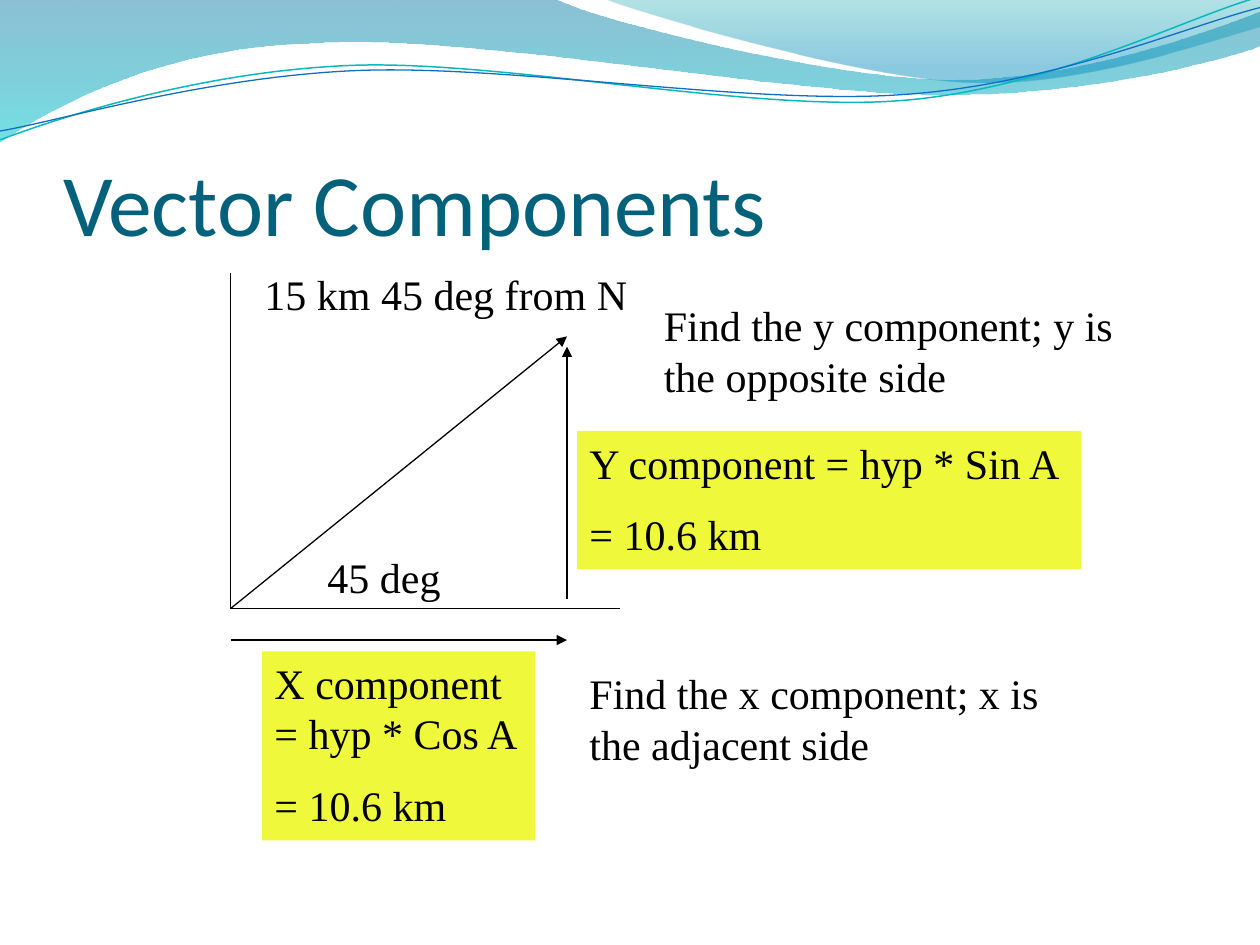
from math import cos, radians, sin

from lxml import etree
from pptx import Presentation
from pptx.dml.color import RGBColor
from pptx.enum.shapes import MSO_CONNECTOR, MSO_SHAPE
from pptx.enum.text import MSO_ANCHOR, PP_ALIGN
from pptx.oxml.ns import qn
from pptx.util import Inches, Pt

STRAIGHT = MSO_CONNECTOR.STRAIGHT
RECTANGLE = MSO_SHAPE.RECTANGLE
LEFT = PP_ALIGN.LEFT
TOP, BOTTOM = MSO_ANCHOR.TOP, MSO_ANCHOR.BOTTOM

BLACK = RGBColor(0x00, 0x00, 0x00)
YELLOW = RGBColor(0xEF, 0xF8, 0x3A)
TITLE_TEAL = RGBColor(0x04, 0x61, 0x7B)
DEEP_BLUE = RGBColor(0x00, 0x74, 0xA1)
CYAN = RGBColor(0x00, 0xC6, 0xCF)
SEA_GREEN = RGBColor(0x00, 0xA1, 0xA9)
SKY_BLUE = RGBColor(0x00, 0x8B, 0xBF)
LINE_TEAL = RGBColor(0x0A, 0xB8, 0xBF)
LINE_BLUE = RGBColor(0x0F, 0x6F, 0xC6)
WAVE_TILT = -2.7
WAVE_CENTER = (4.99, 0.58)

presentation = Presentation()
presentation.slide_width = Inches(10)
presentation.slide_height = Inches(7.5)
slide = presentation.slides.add_slide(presentation.slide_layouts[5])
shapes = slide.shapes


def add_wave(path, closed, tilt=0):
    """Draw a path of points (x, y) and six-number Bezier segments."""
    center_x, center_y = WAVE_CENTER
    cosine, sine = cos(radians(-tilt)), sin(radians(-tilt))
    segments = []
    for segment in path:
        points = []
        for x, y in zip(segment[::2], segment[1::2]):
            dx, dy = x - center_x, y - center_y
            points.append((Inches(center_x + cosine * dx - sine * dy),
                           Inches(center_y + sine * dx + cosine * dy)))
        segments.append(points)
    builder = shapes.build_freeform(*segments[0][0])
    builder.add_line_segments([points[-1] for points in segments[1:]], close=closed)
    wave = builder.convert_to_shape()
    wave.shadow.inherit = False

    # Bend the straight segments that have control points
    straight_nodes = list(wave.element.spPr.iter(qn("a:lnTo")))
    for node, points in zip(straight_nodes, segments[1:]):
        if len(points) == 3:
            curve = etree.Element(qn("a:cubicBezTo"))
            for x, y in points:
                etree.SubElement(curve, qn("a:pt"), x=str(x - wave.left), y=str(y - wave.top))
            node.getparent().replace(node, curve)
    wave.rotation = tilt
    return wave


def write_text(shape, paragraphs, size, font_name, color):
    """Fill a shape with left-aligned paragraphs in one font."""
    frame = shape.text_frame
    frame.word_wrap = True
    frame.text = "\n".join(paragraphs)
    for index, paragraph in enumerate(frame.paragraphs):
        paragraph.alignment = LEFT
        if index:
            paragraph.space_before = Pt(size / 2)
        font_format = {"size": Pt(size), "name": font_name}
        for name, value in font_format.items():
            setattr(paragraph.font, name, value)
        paragraph.font.color.rgb = color


# Shaded waves: path, then gradient stops as position, color, opacity
filled_waves = [
    ([(0, 0), (4.4, -0.01), (4.76, 0.17, 6.64, 0.63, 7.58, 0.63),
      (8.53, 0.63, 9.58, 0.26, 10, 0.09), (10.01, 0.36),
      (9.83, 0.44, 8.7, 0.76, 7.46, 0.75), (6.22, 0.75, 3.82, 0.28, 2.57, 0.34),
      (1.29, 0.36, 0.46, 0.83, -0.01, 1.13)],
     [(0, DEEP_BLUE, 45), (1, CYAN, 55)]),
    ([(4.79, -0.01), (5.09, 0.11, 6.82, 0.62, 7.69, 0.65),
      (8.56, 0.69, 9.61, 0.32, 10, 0.21), (10, 0)],
     [(0, SEA_GREEN, 30), (0.8, SKY_BLUE, 45)]),
]
for path, stops in filled_waves:
    wave = add_wave(path, True)
    wave.line.fill.background()
    wave.fill.gradient()
    wave.fill.gradient_angle = 270
    for stop, (position, color, _) in zip(wave.fill.gradient_stops, stops):
        stop.position = position
        stop.color.rgb = color
    for color_node, (_, _, opacity) in zip(wave.element.spPr.iter(qn("a:srgbClr")), stops):
        etree.SubElement(color_node, qn("a:alpha"), val=str(opacity * 1000))

# Thin tilted wave lines
wave_lines = [
    ([(0, 1.11), (0.48, 0.93, 1.58, 0.57, 2.77, 0.52),
      (3.95, 0.47, 5.93, 0.89, 7.13, 0.8), (8.33, 0.71, 9.38, 0.15, 9.98, -0.02)],
     LINE_TEAL, 0.85),
    ([(0, 1.04), (0.47, 0.96, 1.64, 0.61, 2.83, 0.56),
      (4.03, 0.51, 5.97, 0.84, 7.17, 0.75), (8.36, 0.67, 9.41, 0.21, 10, 0.06)],
     LINE_BLUE, 0.75),
]
for path, color, width in wave_lines:
    wave = add_wave(path, False, WAVE_TILT)
    wave.fill.background()
    wave.line.color.rgb = color
    wave.line.width = Pt(width)

# Title, in front of the waves
title = shapes.title
title.left, title.top = Inches(0.5), Inches(0.77)
title.width, title.height = Inches(9.08), Inches(1.25)
write_text(title, ["Vector Components"], 50, "Calibri", TITLE_TEAL)
title_format = {"vertical_anchor": BOTTOM, "margin_left": 0, "margin_right": 0,
                "margin_top": Inches(0.05), "margin_bottom": 0}
for name, value in title_format.items():
    setattr(title.text_frame, name, value)
title.element.getparent().append(title.element)

# Axes, the vector and its components: start, end, arrowhead
origin = (1.83, 4.83)
diagram_lines = [
    ((1.83, 2.17), origin, False),
    (origin, (4.92, 4.83), False),
    (origin, (4.5, 2.67), True),
    ((1.83, 5.08), (4.5, 5.08), True),
    ((4.5, 4.75), (4.5, 2.75), True),
]
for start, end, has_arrowhead in diagram_lines:
    connector = shapes.add_connector(STRAIGHT, *map(Inches, start + end))
    connector.line.color.rgb = BLACK
    connector.line.width = Pt(0.75)
    properties = connector.element.spPr
    if has_arrowhead:
        etree.SubElement(properties.find(qn("a:ln")), qn("a:tailEnd"), type="triangle")
    etree.SubElement(properties, qn("a:effectLst"))

# Labels and highlighted results: box, paragraphs, fill
notes = [
    ((2.5, 4.33, 1.58, 0.5), ["45 deg"], None),
    ((4.58, 5.25, 3.92, 0.9), ["Find the x component; x is the adjacent side"], None),
    ((2, 2.08, 3.08, 0.5), ["15 km 45 deg from N"], None),
    ((5.17, 2.33, 4, 0.9), ["Find the y component; y is the opposite side"], None),
    ((2.08, 5.17, 2.17, 1.5), ["X component = hyp * Cos A", "= 10.6 km"], YELLOW),
    ((4.58, 3.42, 4, 1.1), ["Y component = hyp * Sin A", "= 10.6 km"], YELLOW),
]
for box, paragraphs, fill in notes:
    if fill is None:
        note = shapes.add_textbox(*map(Inches, box))
    else:
        note = shapes.add_shape(RECTANGLE, *map(Inches, box))
        note.shadow.inherit = False
        note.fill.solid()
        note.fill.fore_color.rgb = fill
        note.line.fill.background()
    note.text_frame.vertical_anchor = TOP
    write_text(note, paragraphs, 24, "Times New Roman", BLACK)

presentation.save("out.pptx")
